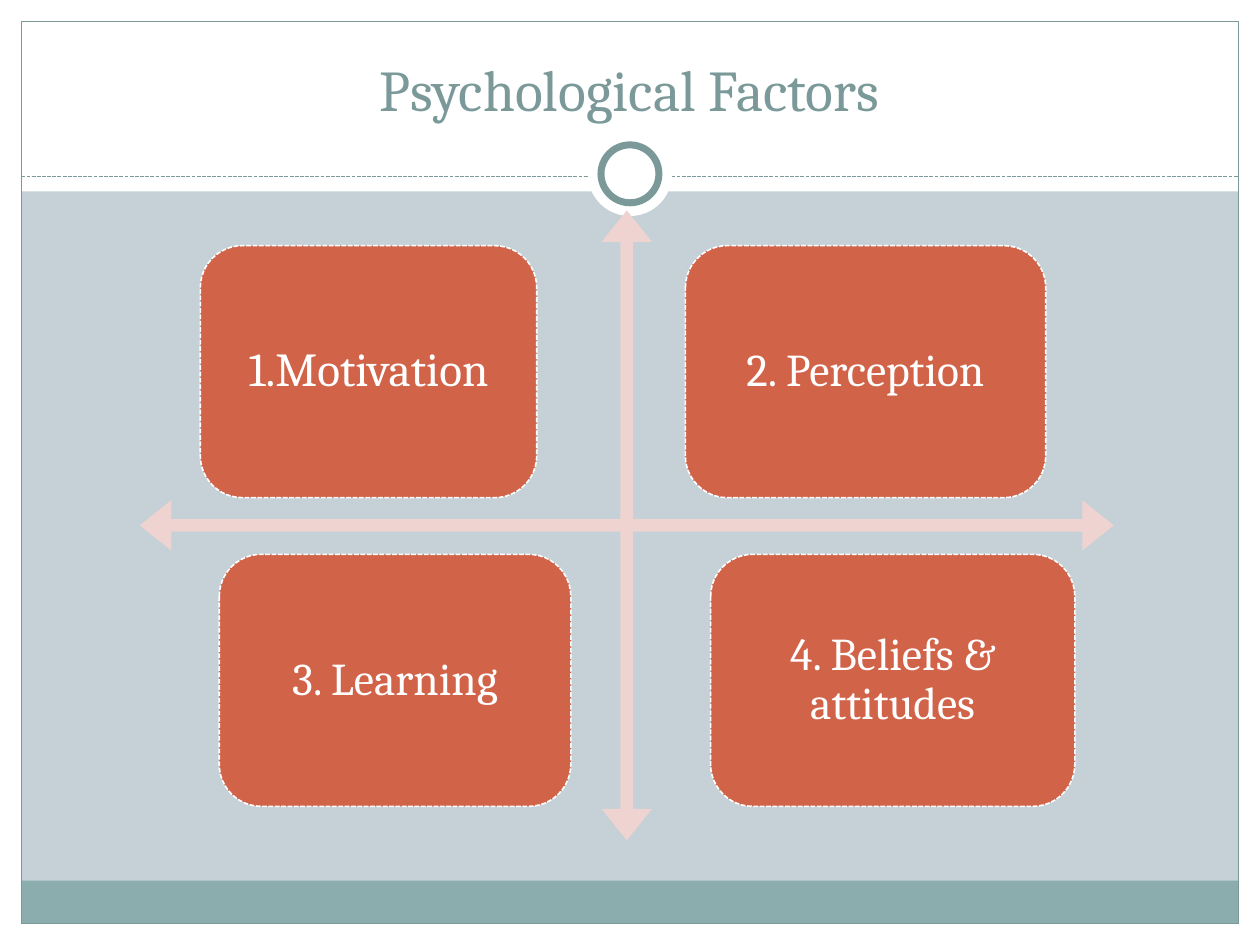
from pptx import Presentation
from pptx.dml.color import RGBColor
from pptx.enum.dml import MSO_LINE
from pptx.enum.shapes import MSO_CONNECTOR, MSO_SHAPE
from pptx.enum.text import MSO_ANCHOR, PP_ALIGN
from pptx.oxml.ns import qn
from pptx.util import Inches, Pt

RECT, OVAL = MSO_SHAPE.RECTANGLE, MSO_SHAPE.OVAL
ROUNDED, QUAD_ARROW = MSO_SHAPE.ROUNDED_RECTANGLE, MSO_SHAPE.QUAD_ARROW
STRAIGHT, DASH = MSO_CONNECTOR.STRAIGHT, MSO_LINE.SQUARE_DOT
CENTER = PP_ALIGN.CENTER
MIDDLE, BOTTOM = MSO_ANCHOR.MIDDLE, MSO_ANCHOR.BOTTOM

FONT = "Cambria"
WHITE, TEAL, BAND = "FFFFFF", "7C999A", "8CADAE"
BACKDROP, ORANGE, PINK = "C5D1D7", "D16349", "EED3D0"
WIDTH, HEIGHT, MARGIN = 10, 7.5, 0.17


def rgb(color):
    return RGBColor.from_string(color)


def add_shape(s, kind, x, y, w, h, fill=None, line=None, weight=0.75):
    sp = s.shapes.add_shape(kind, Inches(x), Inches(y), Inches(w), Inches(h))
    sp.shadow.inherit = False
    if fill:
        sp.fill.solid()
        sp.fill.fore_color.rgb = rgb(fill)
    else:
        sp.fill.background()
    if line:
        sp.line.color.rgb = rgb(line)
        sp.line.width = Pt(weight)
    else:
        sp.line.fill.background()
    return sp


def write_text(sp, text, size, color, anchor, inset, spacing=1):
    tf = sp.text_frame
    tf.word_wrap = True
    tf.vertical_anchor = anchor
    tf.margin_left = tf.margin_right = Inches(inset)
    tf.margin_top = tf.margin_bottom = Inches(min(inset, 0.11))
    p = tf.paragraphs[0]
    p.text = text
    p.alignment = CENTER
    p.line_spacing = spacing
    font = p.runs[0].font
    font.name, font.size, font.color.rgb = FONT, Pt(size), rgb(color)


def add_frame(s, x, y, w, h):
    """White margins and header, footer band and thin border."""
    right, bottom = x + w - MARGIN, y + h - MARGIN
    for box in ((x, bottom, w, MARGIN), (x, y, w, 1.52),
                (x, y, MARGIN, h), (right, y, MARGIN, h)):
        add_shape(s, RECT, *box, fill=WHITE)
    inner = w - 2 * MARGIN
    add_shape(s, RECT, x + MARGIN, bottom - 0.34, inner, 0.34, fill=BAND)
    add_shape(s, RECT, x + MARGIN, y + MARGIN, inner, h - 2 * MARGIN, line=TEAL)


def add_divider(s, x, y, w):
    """Dashed rule with a ring at its centre."""
    rule = s.shapes.add_connector(STRAIGHT, Inches(x), Inches(y),
                                  Inches(x + w), Inches(y))
    rule.line.color.rgb = rgb(TEAL)
    rule.line.width = Pt(0.75)
    rule.line.dash_style = DASH
    props = rule._element.spPr
    props.append(props.makeelement(qn("a:effectLst"), {}))
    cx, cy = x + w / 2, y - 0.02
    for size, line in ((0.67, None), (0.46, TEAL)):
        add_shape(s, OVAL, cx - size / 2, cy - size / 2, size, size,
                  fill=WHITE, line=line, weight=4)


def add_title(s, text, x, y, w, h):
    box = s.shapes.add_textbox(Inches(x), Inches(y), Inches(w), Inches(h))
    write_text(box, text, 33, TEAL, BOTTOM, 0.1)


def add_matrix(s, x, y, w, h):
    """Four-way arrow with a card in each quadrant."""
    arrow = add_shape(s, QUAD_ARROW, x, y, w, h, fill=PINK)
    for i, value in enumerate((0.02, 0.04, 0.05)):
        arrow.adjustments[i] = value
    card_h, inset = 2, 0.28
    top, bottom = y + inset, y + h - inset - card_h + 0.01
    cards = (
        ("1.Motivation", 0.48, top, 2.67, 27),
        ("2. Perception", 4.33, top, 2.86, 26),
        ("3. Learning", 0.63, bottom, 2.79, 26),
        ("4. Beliefs & attitudes", 4.53, bottom, 2.89, 26),
    )
    for text, dx, card_y, card_w, size in cards:
        card = add_shape(s, ROUNDED, x + dx, card_y, card_w, card_h,
                         fill=ORANGE, line=WHITE, weight=0.9)
        card.line.dash_style = DASH
        write_text(card, text, size, WHITE, MIDDLE, 0.11, spacing=0.9)


def main():
    prs = Presentation()
    prs.slide_width, prs.slide_height = Inches(WIDTH), Inches(HEIGHT)
    s = prs.slides.add_slide(prs.slide_layouts[6])
    s.background.fill.solid()
    s.background.fill.fore_color.rgb = rgb(BACKDROP)
    add_frame(s, 0, 0, WIDTH, HEIGHT)
    add_divider(s, MARGIN, 1.4, WIDTH - 2 * MARGIN)
    add_title(s, "Psychological Factors", 0.33, 0.25, 9.33, 0.83)
    add_matrix(s, 1.11, 1.67, 7.73, 5)
    prs.save("out.pptx")


if __name__ == "__main__":
    main()
